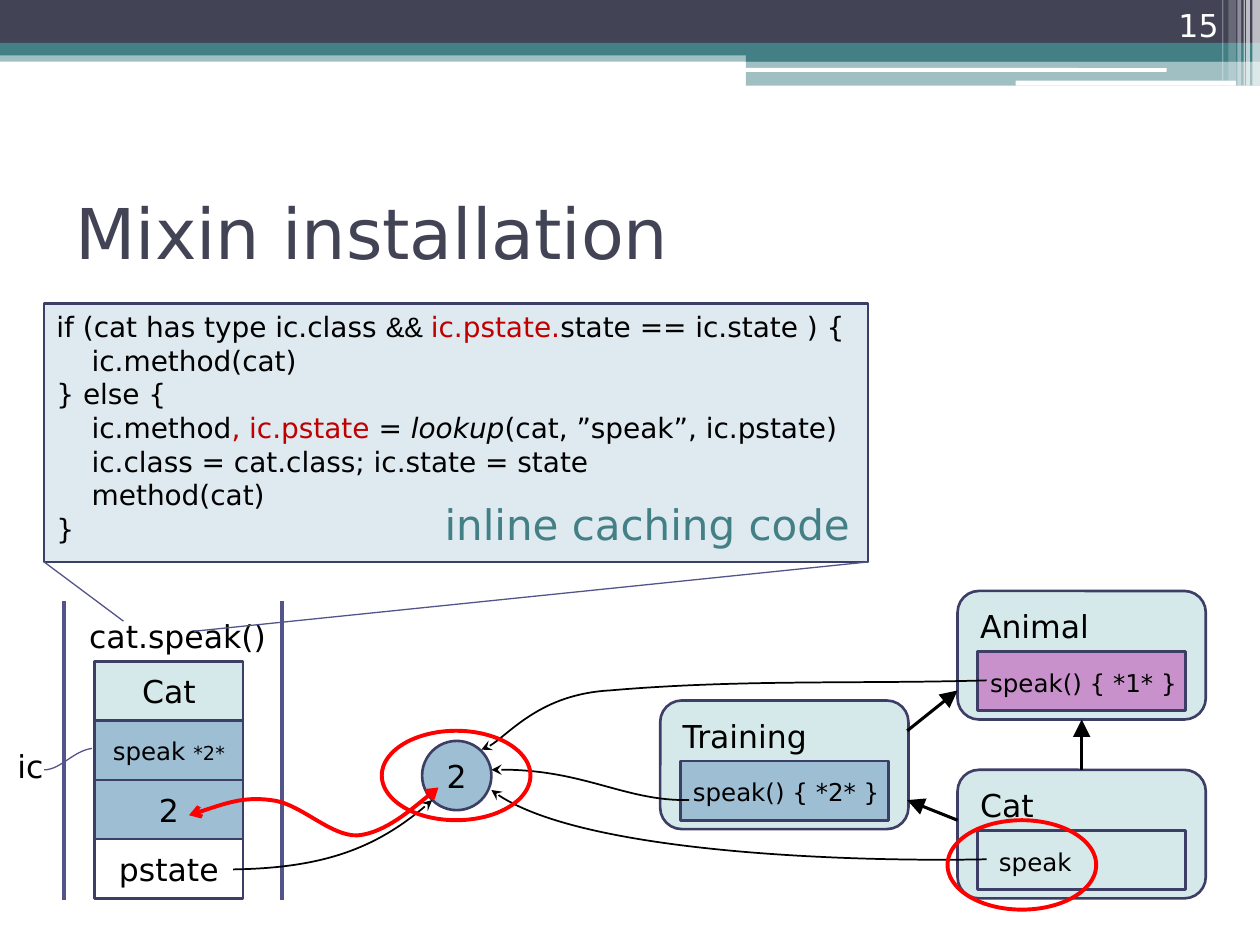
"""Builds the mixin installation slide: inline cache, state and class diagram."""
from dataclasses import dataclass
from typing import NamedTuple, Optional

from pptx import Presentation
from pptx.dml.color import RGBColor
from pptx.enum.shapes import MSO_CONNECTOR, MSO_SHAPE
from pptx.enum.text import MSO_ANCHOR, MSO_AUTO_SIZE, PP_ALIGN
from pptx.oxml.ns import qn
from pptx.util import Inches, Pt
from lxml.etree import SubElement

BLACK = RGBColor(0x00, 0x00, 0x00)
WHITE = RGBColor(0xFF, 0xFF, 0xFF)
RED = RGBColor(0xFF, 0x00, 0x00)
DARK_RED = RGBColor(0xC0, 0x00, 0x00)
SLATE = RGBColor(0x42, 0x44, 0x56)
TEAL = RGBColor(0x43, 0x80, 0x86)
BORDER = RGBColor(0x3D, 0x3E, 0x66)
INDIGO = RGBColor(0x53, 0x54, 0x8A)
MINT = RGBColor(0xD6, 0xE9, 0xEA)
BLUE = RGBColor(0x9D, 0xBE, 0xD3)
PURPLE = RGBColor(0xC9, 0x91, 0xCB)
PALE = RGBColor(0xDE, 0xE9, 0xF0)
RECT, ROUND, OVAL = MSO_SHAPE.RECTANGLE, MSO_SHAPE.ROUNDED_RECTANGLE, MSO_SHAPE.OVAL


class Run(NamedTuple):
    text: str
    size: float = 18
    color: RGBColor = BLACK
    font: str = "DejaVu Sans"
    italic: bool = False


class Line(NamedTuple):
    color: RGBColor
    width: float
    head: str = ""
    tail: str = ""
    head_size: str = "med"


class Bar(NamedTuple):
    box: tuple
    color: RGBColor
    alpha: int = 100
    kind: MSO_SHAPE = RECT


@dataclass
class ClassBox:
    name: str
    left: float
    top: float
    name_width: float
    method: str
    fill: Optional[RGBColor]
    method_offset: float = 0.16
    method_width: float = 1.78


EDGE = Line(BORDER, 1.5)
ARROW = Line(BLACK, 1.75, tail="triangle", head_size="lg")
POINTER = Line(BLACK, 1, tail="stealth")
RAIL = Line(INDIGO, 2)
CALLOUT = Line(INDIGO, 0.75)
MARK = Line(RED, 2.25)

BARS = [
    Bar((0, 0.4, 10, 0.09), TEAL, 50), Bar((0, 0, 10, 0.34), SLATE),
    Bar((0, 0.34, 10, 0.1), TEAL), Bar((5.92, 0.39, 4.08, 0.1), TEAL),
    Bar((5.92, 0.48, 4.08, 0.2), TEAL, 50),
    Bar((5.91, 0.54, 3.35, 0.03), WHITE, kind=ROUND),
    Bar((8.06, 0.64, 1.75, 0.04), WHITE, kind=ROUND),
    Bar((9.94, 0, 0.06, 0.68), WHITE, 65), Bar((9.89, 0, 0.03, 0.68), WHITE, 65),
    Bar((9.87, 0, 0.01, 0.68), WHITE, 60), Bar((9.82, 0, 0.03, 0.68), WHITE, 40),
    Bar((9.75, 0, 0.06, 0.64), WHITE, 20), Bar((9.7, 0, 0.01, 0.64), WHITE, 30),
]
ANIMAL = ClassBox("Animal", 7.6, 4.69, 1.07, "speak() { *1* }", PURPLE)
CAT = ClassBox("Cat", 7.6, 6.11, 0.63, "speak", None, 0.23, 1.18)
TRAINING = ClassBox("Training", 5.24, 5.56, 1.2, "speak() { *2* }", BLUE)
CACHE = [
    ([Run("Cat")], MINT),
    ([Run("speak ", 14), Run("*2*", 11)], BLUE),
    ([Run("2")], BLUE),
    ([Run("pstate")], WHITE),
]


def code(text: str, color: RGBColor = BLACK, **fmt) -> Run:
    return Run(text, 16, color, **fmt)


CODE = [
    (0, [code("if (cat has type ic.class "), code("&& ", font="Arial"),
         code("ic.pstate.", DARK_RED), code("state == ic.state ) {")]),
    (1, [code("ic.method(cat)")]),
    (0, [code("} else {")]),
    (1, [code("ic.method"), code(", ic.pstate ", DARK_RED), code("= "),
         code("lookup", italic=True), code("(cat, ”speak”, ic.pstate)")]),
    (1, [code("ic.class = cat.class; ic.state = state")]),
    (1, [code("method(cat)")]),
    (0, [code("}")]),
]


def add_runs(p, runs: list, align=PP_ALIGN.LEFT) -> None:
    p.alignment = align
    for run in runs:
        r = p.add_run()
        r.text = run.text
        r.font.color.rgb = run.color
        fmt = {"name": run.font, "size": Pt(run.size), "italic": run.italic}
        for key, value in fmt.items():
            setattr(r.font, key, value)


def set_line(s, line: Line) -> None:
    s.line.color.rgb = line.color
    s.line.width = Pt(line.width)
    ln = s.element.spPr.find(qn("a:ln"))
    for tag, kind in (("a:headEnd", line.head), ("a:tailEnd", line.tail)):
        if kind:
            SubElement(ln, qn(tag), type=kind, w=line.head_size, len=line.head_size)


def add_box(sp, kind, box: tuple, fill=None, line=None, runs=(), alpha=100, adj=None):
    s = sp.add_shape(kind, *map(Inches, box))
    s.shadow.inherit = False
    if adj is not None:
        s.adjustments[0] = adj
    if fill is None:
        s.fill.background()
    else:
        s.fill.solid()
        s.fill.fore_color.rgb = fill
        if alpha < 100:
            clr = s.element.spPr.find(".//" + qn("a:srgbClr"))
            SubElement(clr, qn("a:alpha"), val=str(alpha * 1000))
    if line:
        set_line(s, line)
    else:
        s.line.fill.background()
    if runs:
        s.text_frame.vertical_anchor = MSO_ANCHOR.MIDDLE
        add_runs(s.text_frame.paragraphs[0], runs, PP_ALIGN.CENTER)
    return s


def add_text(sp, box: tuple, run: Run, wrap=False, anchor=MSO_ANCHOR.TOP,
             align=PP_ALIGN.LEFT, grow=True) -> None:
    tf = sp.add_textbox(*map(Inches, box)).text_frame
    fmt = {"word_wrap": wrap, "vertical_anchor": anchor,
           "auto_size": MSO_AUTO_SIZE.SHAPE_TO_FIT_TEXT if grow else MSO_AUTO_SIZE.NONE}
    for key, value in fmt.items():
        setattr(tf, key, value)
    add_runs(tf.paragraphs[0], [run], align)


def add_line(sp, start: tuple, end: tuple, line: Line):
    s = sp.add_connector(MSO_CONNECTOR.STRAIGHT, *map(Inches, start + end))
    set_line(s, line)
    SubElement(s.element.spPr, qn("a:effectLst"))
    return s


def add_curve(sp, line: Line, start: tuple, *points: tuple) -> None:
    """Draws cubic Bézier segments, three points to each."""
    builder = sp.build_freeform(*map(Inches, start))
    builder.add_line_segments([tuple(map(Inches, p)) for p in points], close=False)
    s = builder.convert_to_shape()
    s.shadow.inherit = False
    s.fill.background()
    set_line(s, line)
    outline = s.element.find(".//" + qn("a:path"))
    steps = outline.findall(qn("a:lnTo"))
    for i in range(0, len(steps), 3):
        curve = SubElement(outline, qn("a:cubicBezTo"))
        for step in steps[i:i + 3]:
            curve.append(step[0])
            outline.remove(step)


def add_class(sp, c: ClassBox):
    s = add_box(sp, ROUND, (c.left, c.top, 1.97, 1.02), MINT, EDGE)
    add_text(sp, (c.left + 0.08, c.top + 0.08, c.name_width, 0.4), Run(c.name))
    add_box(sp, RECT, (c.left + 0.16, c.top + 0.48, 1.65, 0.47), c.fill, EDGE)
    add_text(sp, (c.left + c.method_offset, c.top + 0.56, c.method_width, 0.34),
             Run(c.method, 14))
    return s


def add_code(sp) -> None:
    tf = add_box(sp, ROUND, (0.35, 2.41, 6.54, 2.05), PALE, EDGE, adj=0).text_frame
    tf.vertical_anchor = MSO_ANCHOR.TOP
    for i, (level, runs) in enumerate(CODE):
        p = tf.add_paragraph() if i else tf.paragraphs[0]
        add_runs(p, runs)
        p._p.get_or_add_pPr().set("marL", str(Inches(0.28 * level)))
    add_text(sp, (3.43, 3.91, 3.42, 0.5), Run("inline caching code", 24, TEAL))


def main() -> None:
    prs = Presentation()
    prs.slide_width, prs.slide_height = Inches(10), Inches(7.5)
    sp = prs.slides.add_slide(prs.slide_layouts[6]).shapes
    for bar in BARS:
        add_box(sp, bar.kind, bar.box, bar.color, alpha=bar.alpha)
    add_text(sp, (0.5, 1.25, 9, 1.17), Run("Mixin installation", 40, SLATE), True,
             MSO_ANCHOR.MIDDLE, grow=False)
    add_text(sp, (8.94, 0, 0.83, 0.4), Run("15", 18, WHITE), True,
             MSO_ANCHOR.BOTTOM, PP_ALIGN.RIGHT, False)

    animal, cat = add_class(sp, ANIMAL), add_class(sp, CAT)
    s = add_line(sp, (8.58, 6.11), (8.58, 5.71), ARROW)
    s.begin_connect(cat, 0)
    s.end_connect(animal, 2)
    add_curve(sp, POINTER, (7.83, 6.82), (6.91, 6.84), (4.56, 6.79), (3.9, 6.27))
    add_class(sp, TRAINING)
    add_line(sp, (7.6, 6.51), (7.2, 6.35), ARROW)
    add_line(sp, (7.2, 5.8), (7.6, 5.48), ARROW)

    add_text(sp, (0.04, 5.88, 0.43, 0.4), Run("ic"))
    add_curve(sp, CALLOUT, (0.73, 5.94), (0.58, 5.96), (0.48, 6.11), (0.35, 6.11))
    for x in (0.51, 2.24):
        add_line(sp, (x, 4.77), (x, 7.14), RAIL)
    add_text(sp, (0.59, 4.85, 1.64, 0.39), Run("cat.speak()"), align=PP_ALIGN.CENTER)
    for i, (runs, fill) in enumerate(CACHE):
        add_box(sp, RECT, (0.75, 5.25 + 0.47 * i, 1.18, 0.47), fill, EDGE, runs)

    add_curve(sp, POINTER, (7.83, 5.4), (6.84, 5.43), (5.88, 5.39), (4.84, 5.48),
              (4.29, 5.51), (3.95, 5.93), (3.82, 5.95))
    add_curve(sp, POINTER, (5.47, 6.35), (4.96, 6.36), (4.62, 6.09), (3.9, 6.11))
    add_box(sp, OVAL, (3.35, 5.88, 0.55, 0.55), BLUE, EDGE, [Run("2")])
    add_curve(sp, POINTER, (1.85, 6.9), (2.56, 6.89), (3.02, 6.72), (3.43, 6.35))

    add_code(sp)
    add_line(sp, (0.35, 4.46), (0.98, 4.93), CALLOUT)
    add_line(sp, (6.89, 4.46), (1.54, 5.01), CALLOUT)
    for x, y in ((3.03, 5.8), (7.52, 6.51)):
        add_box(sp, OVAL, (x, y, 1.18, 0.71), line=MARK)
    add_curve(sp, MARK._replace(head="arrow", tail="arrow"), (1.5, 6.47),
              (1.72, 6.4), (1.93, 6.32), (2.15, 6.35), (2.38, 6.37), (2.62, 6.64),
              (2.84, 6.63), (3.06, 6.61), (3.48, 6.25), (3.48, 6.25))
    prs.save("out.pptx")


if __name__ == "__main__":
    main()
